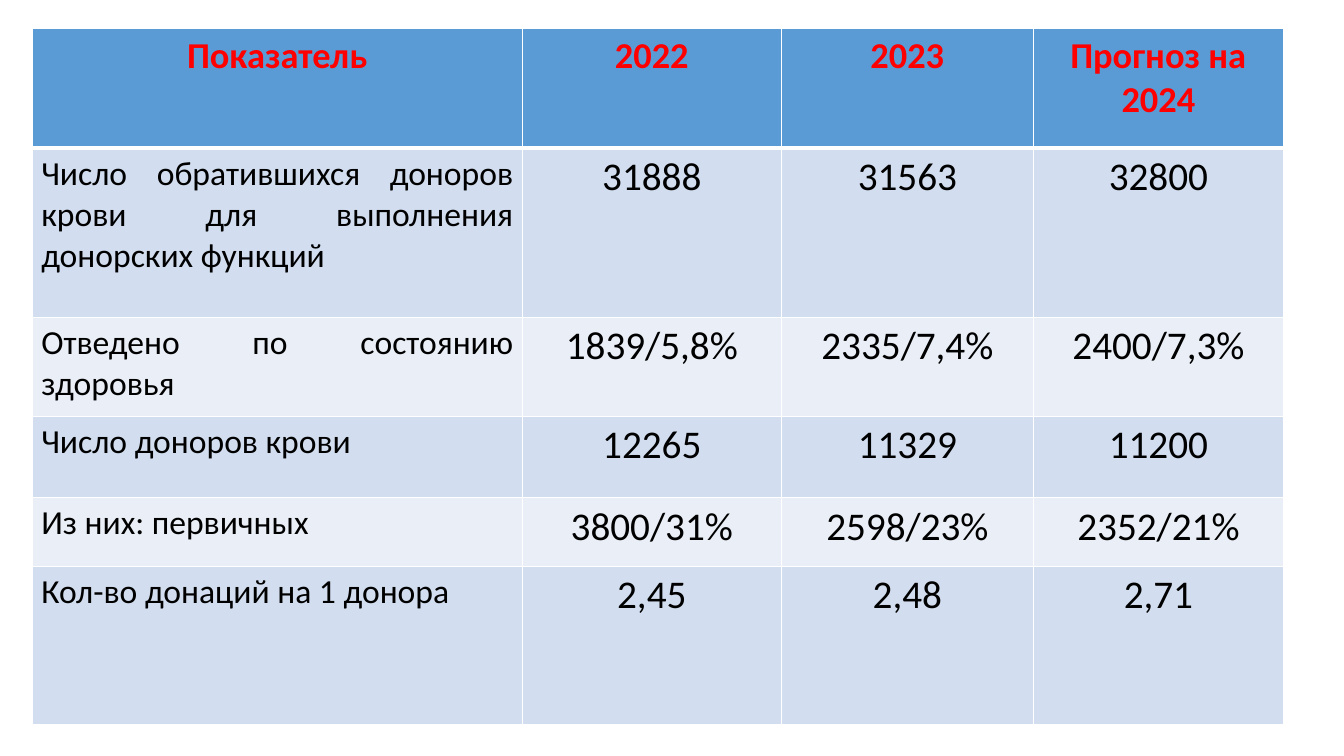
"""Build a slide with a table of blood donor figures for 2022 to 2024."""
import pptx
import pptx.util
import pptx.dml.color
import pptx.enum.text
import lxml.etree

Inches = pptx.util.Inches
Color = pptx.dml.color.RGBColor.from_string
Align = pptx.enum.text.PP_ALIGN
theme = {
    "font": "Calibri",
    "head": {"fill": "5B9BD5", "text": "FF0000", "size": 26},
    "bands": ["D2DEEF", "EAEFF7"],
    "text": "000000",
    "label": 24,
    "value": 28,
    "line": "FFFFFF",
}
widths = [4.86, 2.57, 2.5, 2.48]
heights = [1.19, 1.68, 0.98, 0.81, 0.68, 1.57]
rows = [
    ["Показатель", "2022", "2023", "Прогноз на 2024"],
    ["Число обратившихся доноров крови для выполнения донорских функций",
     "31888", "31563", "32800"],
    ["Отведено по состоянию здоровья", "1839/5,8%", "2335/7,4%", "2400/7,3%"],
    ["Число доноров крови", "12265", "11329", "11200"],
    ["Из них: первичных", "3800/31%", "2598/23%", "2352/21%"],
    ["Кол-во донаций на 1 донора", "2,45", "2,48", "2,71"],
]


def border(cell, side, width):
    props = cell._tc.get_or_add_tcPr()
    line = lxml.etree.SubElement(props, pptx.oxml.ns.qn("a:ln" + side))
    line.set("w", str(pptx.util.Pt(width)))
    fill = lxml.etree.SubElement(line, pptx.oxml.ns.qn("a:solidFill"))
    color = lxml.etree.SubElement(fill, pptx.oxml.ns.qn("a:srgbClr"))
    color.set("val", theme["line"])


deck = pptx.Presentation()
deck.slide_width = Inches(13.33)
deck.slide_height = Inches(7.5)
slide = deck.slides.add_slide(deck.slide_layouts[6])
frame = slide.shapes.add_table(
    len(rows), len(widths), Inches(0.32), Inches(0.28),
    Inches(sum(widths)), Inches(sum(heights)))
table = frame.table
for col, width in zip(table.columns, widths):
    col.width = Inches(width)
for row, height in zip(table.rows, heights):
    row.height = Inches(height)

for r, texts in enumerate(rows):
    for c, text in enumerate(texts):
        cell = table.cell(r, c)
        cell.margin_left = cell.margin_right = Inches(0.09)
        for side in "LRTB":
            thick = (r, side) in [(0, "B"), (1, "T")]
            border(cell, side, 3 if thick else 1)
        if r == 0:
            fill, ink, size = theme["head"].values()
        else:
            fill, ink = theme["bands"][(r - 1) % 2], theme["text"]
            size = theme["value"] if c else theme["label"]
        cell.fill.solid()
        cell.fill.fore_color.rgb = Color(fill)
        cell.text_frame.text = text
        para = cell.text_frame.paragraphs[0]
        para.alignment = Align.JUSTIFY if r and not c else Align.CENTER
        font = para.runs[0].font
        font.name = theme["font"]
        font.size = pptx.util.Pt(size)
        font.bold = r == 0
        font.color.rgb = Color(ink)

deck.save("out.pptx")
